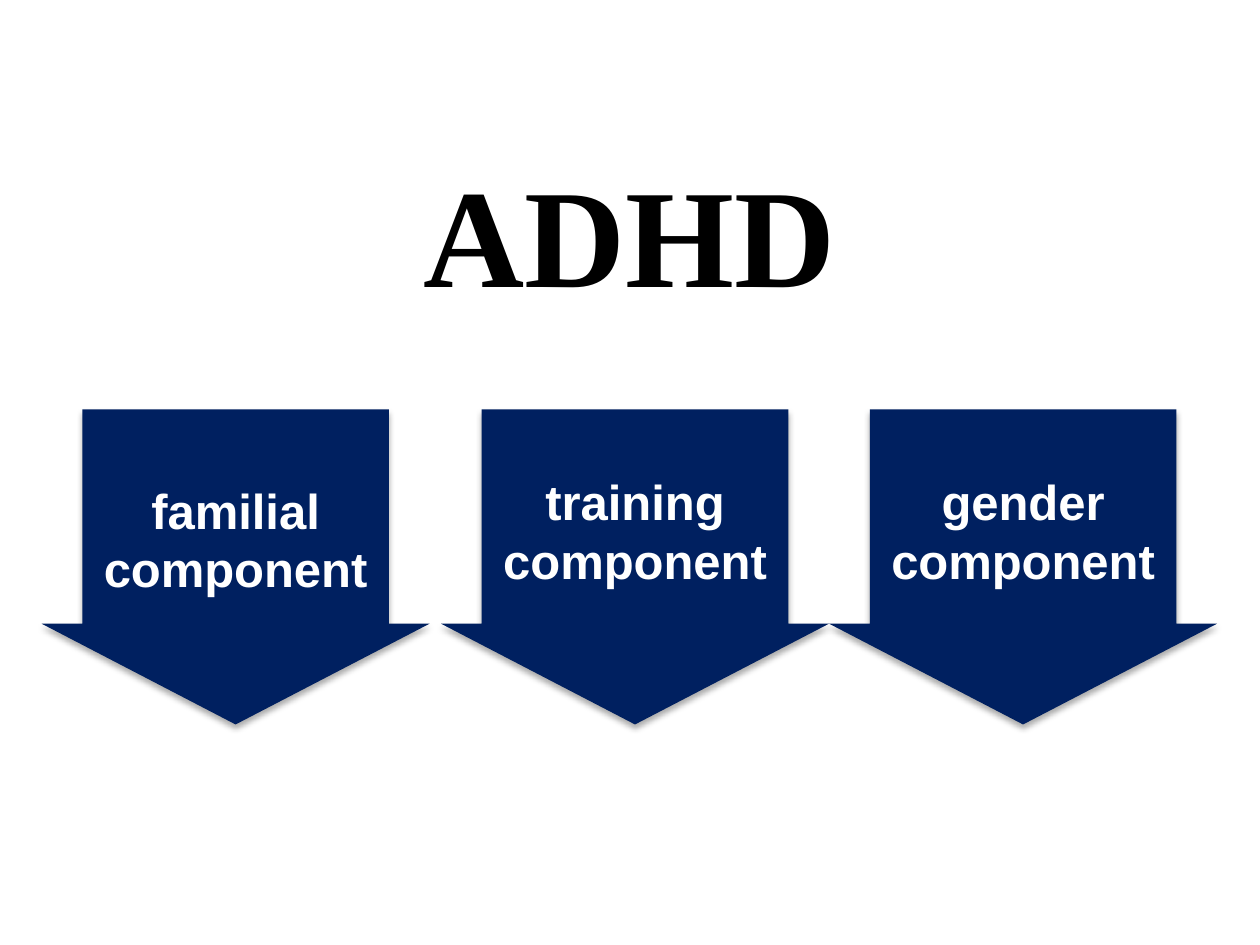
from lxml import etree
from pptx import Presentation
from pptx.dml.color import RGBColor
from pptx.enum.shapes import MSO_SHAPE
from pptx.enum.text import MSO_ANCHOR, PP_ALIGN
from pptx.oxml.ns import qn
from pptx.util import Inches, Pt

DOWN_ARROW = MSO_SHAPE.DOWN_ARROW
TOP, MIDDLE = MSO_ANCHOR.TOP, MSO_ANCHOR.MIDDLE
CENTER = PP_ALIGN.CENTER

NAVY = RGBColor(0x00, 0x20, 0x60)
WHITE = RGBColor(0xFF, 0xFF, 0xFF)
BLACK = RGBColor(0x00, 0x00, 0x00)

TITLE = "ADHD"
# lines, left edge and space above the text, in inches
COMPONENTS = [
    (("familial", "component"), 0.33, 0.56),
    (("training", "component"), 3.5, 0.49),
    (("gender", "component"), 6.58, 0.49),
]
ARROW_TOP, ARROW_WIDTH, ARROW_HEIGHT = 3.25, 3.08, 2.5
SHAFT_SHARE, HEAD_SHARE = 0.79, 0.32


def write_line(para, text, font, size, color):
    para.alignment = CENTER
    span = para.add_run()
    span.text = text
    span.font.name = font
    span.font.size = Pt(size)
    span.font.bold = True
    span.font.color.rgb = color


def add_soft_shadow(shape):
    shape.shadow.inherit = False
    effects = shape._element.spPr.find(qn("a:effectLst"))
    shadow = etree.SubElement(
        effects, qn("a:outerShdw"), blurRad=str(Pt(3.5)), dist=str(Pt(2.2)),
        dir="5400000", rotWithShape="0")
    color = etree.SubElement(shadow, qn("a:srgbClr"), val=str(BLACK))
    etree.SubElement(color, qn("a:alpha"), val="32000")


def add_component(page, lines, left, space_above):
    arrow = page.shapes.add_shape(
        DOWN_ARROW, Inches(left), Inches(ARROW_TOP),
        Inches(ARROW_WIDTH), Inches(ARROW_HEIGHT))
    arrow.adjustments[0] = SHAFT_SHARE
    arrow.adjustments[1] = HEAD_SHARE
    arrow.fill.solid()
    arrow.fill.fore_color.rgb = NAVY
    arrow.line.fill.background()
    add_soft_shadow(arrow)

    frame = arrow.text_frame
    frame.word_wrap = True
    frame.vertical_anchor = TOP
    frame.margin_top = Inches(space_above)
    for index, line in enumerate(lines):
        para = frame.add_paragraph() if index else frame.paragraphs[0]
        write_line(para, line, "Arial", 28, WHITE)


def main():
    deck = Presentation()
    deck.slide_width, deck.slide_height = Inches(10), Inches(7.5)
    page = deck.slides.add_slide(deck.slide_layouts[5])

    title = page.shapes.title
    title.left, title.top = Inches(0.75), Inches(0.67)
    title.width, title.height = Inches(8.5), Inches(2.33)
    title.text_frame.vertical_anchor = MIDDLE
    write_line(title.text_frame.paragraphs[0], TITLE, "Times New Roman", 80, BLACK)

    for component in COMPONENTS:
        add_component(page, *component)
    deck.save("out.pptx")


if __name__ == "__main__":
    main()
